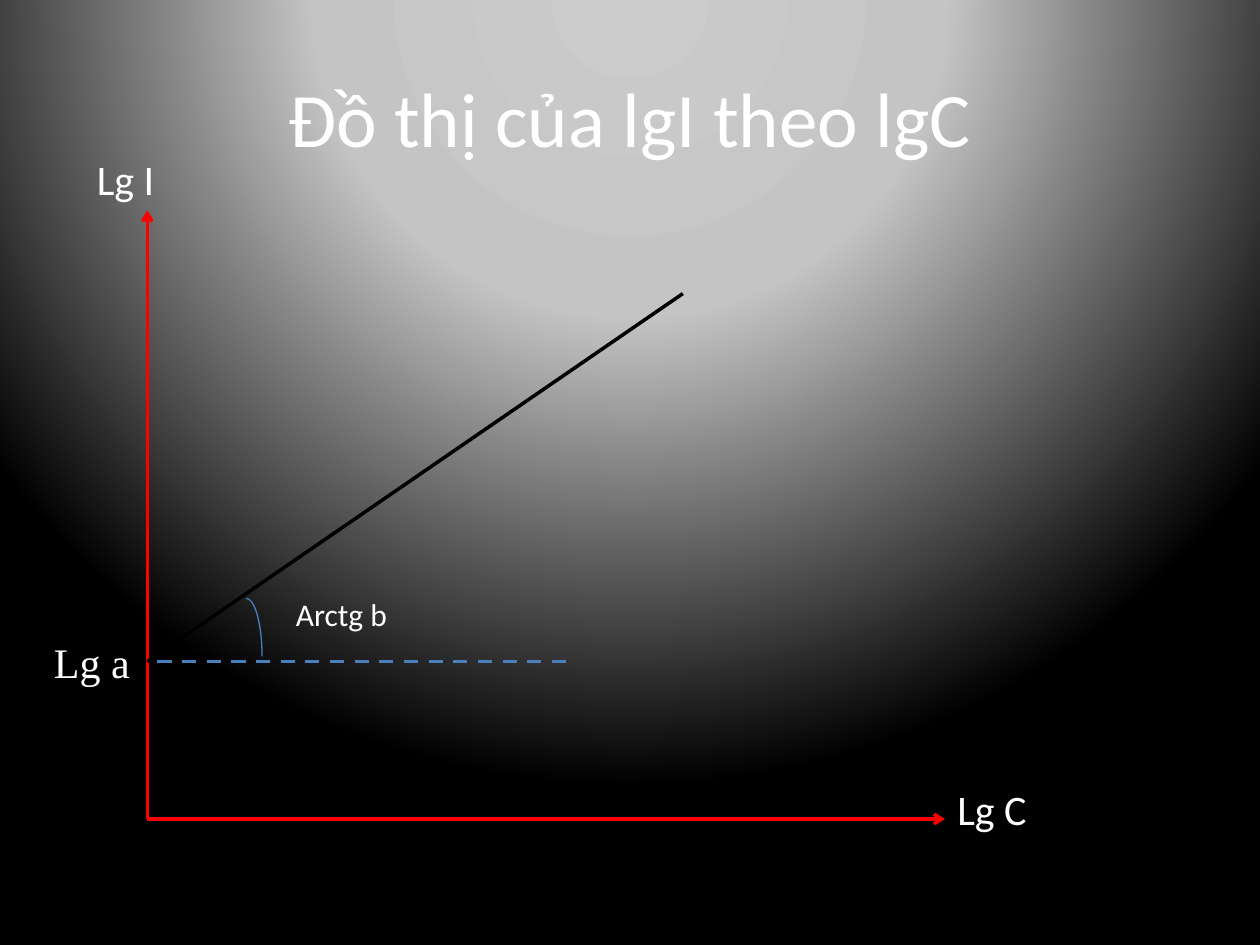
import lxml.etree
import pptx
import pptx.dml.color
import pptx.enum.dml
import pptx.enum.shapes
import pptx.enum.text
import pptx.oxml.ns
import pptx.util

Inches = pptx.util.Inches
qn = pptx.oxml.ns.qn
WHITE, RED, BLACK, BLUE = "FFFFFF", "FF0000", "000000", "4B7EBC"


def rgb(value):
    return pptx.dml.color.RGBColor.from_string(value)


def paint_background(page):
    """Fill the page with a circular gradient centred above its top edge."""
    page.background.fill.gradient()
    gradient = page.element.find(".//" + qn("a:gradFill"))
    for child in list(gradient):
        gradient.remove(child)
    stops = lxml.etree.SubElement(gradient, qn("a:gsLst"))
    for percent, color in ((0, "CCCCCC"), (40, "C4C4C4"), (100, BLACK)):
        stop = lxml.etree.SubElement(stops, qn("a:gs"), pos=str(percent * 1000))
        lxml.etree.SubElement(stop, qn("a:srgbClr"), val=color)
    circle = lxml.etree.SubElement(gradient, qn("a:path"), path="circle")
    lxml.etree.SubElement(circle, qn("a:fillToRect"),
                          l="50000", t="-80000", r="50000", b="180000")


def write(frame, text, size, font="Calibri"):
    span = frame.paragraphs[0].add_run()
    span.text = text
    span.font.size = pptx.util.Pt(size)
    span.font.name = font
    span.font.color.rgb = rgb(WHITE)


def add_title(page, left, top, width, height):
    title = page.shapes.title
    title.left, title.top = Inches(left), Inches(top)
    title.width, title.height = Inches(width), Inches(height)
    frame = title.text_frame
    frame.vertical_anchor = pptx.enum.text.MSO_ANCHOR.MIDDLE
    write(frame, "Đồ thị của lgI theo lgC", 44)
    frame.paragraphs[0].alignment = pptx.enum.text.PP_ALIGN.CENTER


def add_line(shapes, start, end, color, arrow=False):
    line = shapes.add_connector(pptx.enum.shapes.MSO_CONNECTOR.STRAIGHT,
                                *map(Inches, start + end))
    line.line.color.rgb = rgb(color)
    line.line.width = pptx.util.Pt(2)
    if arrow:
        lxml.etree.SubElement(line.line._get_or_add_ln(), qn("a:tailEnd"), type="arrow")
    lxml.etree.SubElement(line.element.spPr, qn("a:effectLst"))
    return line


def add_label(shapes, text, box, size=24, font="Calibri", wrap=True):
    label = shapes.add_textbox(*map(Inches, box))
    frame = label.text_frame
    frame.word_wrap = wrap
    frame.auto_size = pptx.enum.text.MSO_AUTO_SIZE.SHAPE_TO_FIT_TEXT
    write(frame, text, size, font)
    return label


def add_angle_arc(shapes, box):
    arc = shapes.add_shape(pptx.enum.shapes.MSO_SHAPE.ARC, *map(Inches, box))
    arc.shadow.inherit = False
    arc.fill.background()
    arc.line.color.rgb = rgb(BLUE)
    arc.line.width = pptx.util.Pt(0.75)


def add_graph(page, left, top, width, height):
    """Draw the axes from the lower left corner of the box, then the sloped line."""
    shapes = page.shapes.add_group_shape().shapes
    origin = (left, top + height)
    intercept = top + 3.58
    add_line(shapes, origin, (left, top), RED, arrow=True)
    add_line(shapes, origin, (left + width, top + height), RED, arrow=True)
    add_line(shapes, (left, intercept), (left + 4.25, top + 0.66), BLACK)

    intercept_label = add_label(shapes, "Lg a", (left - 0.84, intercept - 0.25, 0.92, 0.5),
                                font="Times New Roman")
    level = add_line(shapes, (left + 0.08, intercept), (left + 3.33, intercept), BLUE)
    level.line.dash_style = pptx.enum.dml.MSO_LINE.DASH
    level.begin_connect(intercept_label, 3)

    add_angle_arc(shapes, (left + 0.66, intercept - 0.5, 0.25, 0.92))
    add_label(shapes, "Arctg b", (left + 1.08, intercept - 0.58, 1.08, 0.4), size=18)
    add_label(shapes, "Lg I", (left - 0.5, top - 0.5, 1.08, 0.5))
    add_label(shapes, "Lg C", (left + width, top + height - 0.33, 0.76, 0.5), wrap=False)


def main():
    deck = pptx.Presentation()
    deck.slide_width, deck.slide_height = Inches(10), Inches(7.5)
    page = deck.slides.add_slide(deck.slide_layouts.get_by_name("Title Only"))
    paint_background(page)
    add_title(page, 0.5, 0.3, 9, 1.25)
    add_graph(page, 1.17, 1.67, 6.33, 4.83)
    deck.save("out.pptx")


if __name__ == "__main__":
    main()
